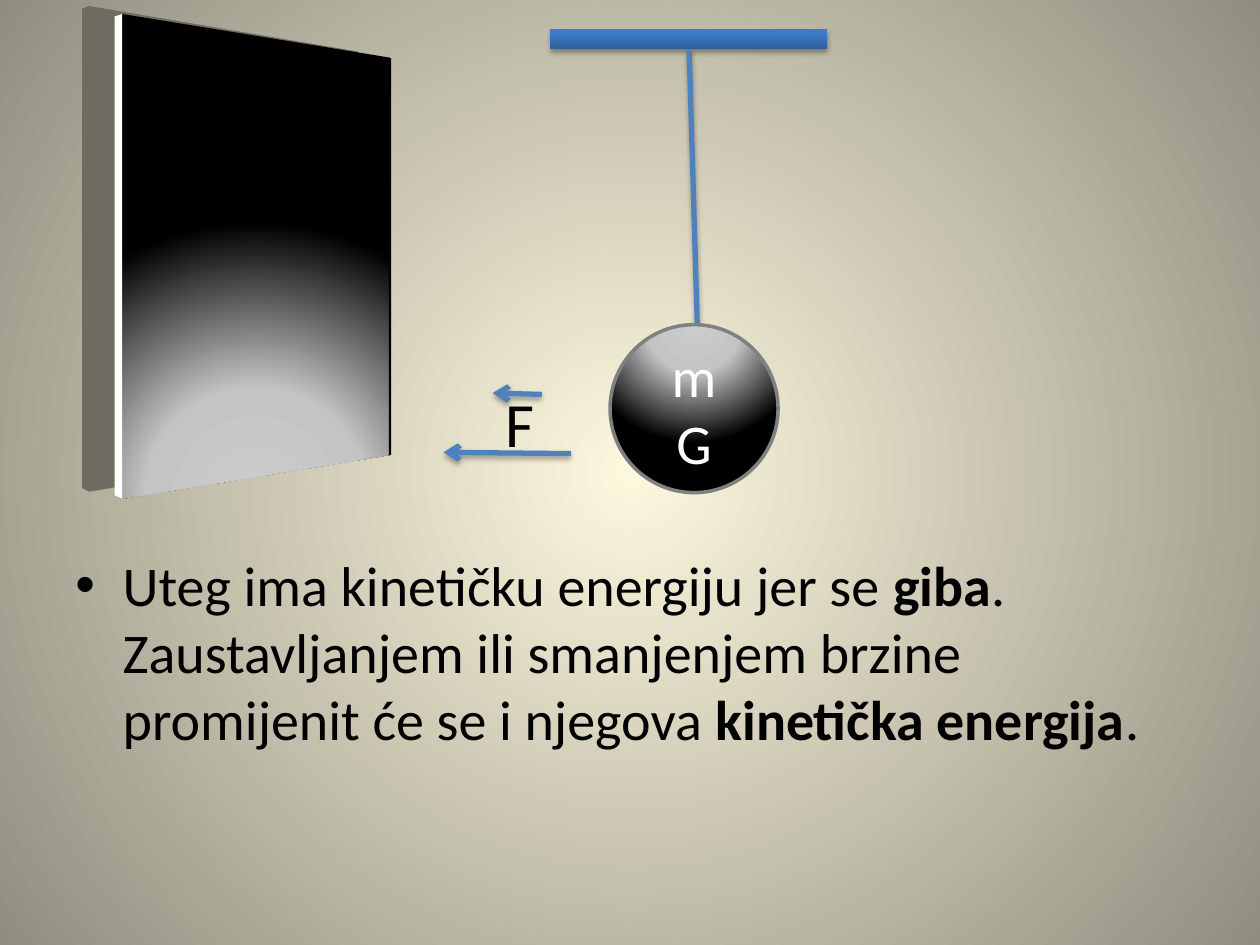
import pptx
import pptx.util
import pptx.oxml
import pptx.oxml.ns
import pptx.dml.color
import pptx.enum.shapes
import pptx.enum.text
from dataclasses import dataclass

Pt = pptx.util.Pt
RGB = pptx.dml.color.RGBColor.from_string
qn = pptx.oxml.ns.qn
NS = pptx.oxml.ns.nsdecls("a")
SHAPE = pptx.enum.shapes.MSO_SHAPE
ALIGN = pptx.enum.text.PP_ALIGN


@dataclass(frozen=True)
class Theme:
    font: str = "Calibri"
    body: int = 32
    force: int = 36
    black: str = "000000"
    white: str = "FFFFFF"
    blue: str = "4F81BD"
    rim: str = "808080"
    slab_back: str = "6E6B60"
    backdrop: tuple = ((0, "FCF7DD"), (100, "918E81"))
    bar: tuple = ((0, "2F5F99"), (80, "3D7CC7"), (100, "3A7CCB"))
    metal: tuple = ((0, "CCCCCC"), (40, "C4C4C4"), (100, "000000"))


T = Theme()


def set_gradient(fill, owner, stops, direction):
    """Fill with stops; direction holds the XML of a:lin or a:path."""
    fill.gradient()
    old = owner.find(".//" + qn("a:gradFill"))
    gs = "".join(f'<a:gs pos="{pos * 1000}"><a:srgbClr val="{color}"/></a:gs>'
                 for pos, color in stops)
    new = pptx.oxml.parse_xml(
        f'<a:gradFill {NS} rotWithShape="1"><a:gsLst>{gs}</a:gsLst>{direction}</a:gradFill>')
    old.getparent().replace(old, new)


def add_shadow(sp):
    """Add a soft shadow below; call after the fill and line are set."""
    sp.element.spPr.append(pptx.oxml.parse_xml(
        f'<a:effectLst {NS}><a:outerShdw blurRad="{Pt(3.1)}" dist="{Pt(1.8)}" '
        'dir="5400000" rotWithShape="0"><a:srgbClr val="000000"><a:alpha val="35000"/>'
        '</a:srgbClr></a:outerShdw></a:effectLst>'))


CIRCLE = ('<a:path path="circle"><a:fillToRect l="50000" t="{}" r="50000" b="{}"/></a:path>')

prs = pptx.Presentation()
prs.slide_width, prs.slide_height = Pt(720), Pt(540)
s = prs.slides.add_slide(prs.slide_layouts[6])
set_gradient(s.background.fill, s.element, T.backdrop, CIRCLE.format(50000, 50000))

# Body sentence and force label
tb = s.shapes.add_textbox(Pt(36), Pt(311), Pt(648), Pt(170))
tf = tb.text_frame
tf.word_wrap = True
p = tf.paragraphs[0]
for text, bold in (("Uteg ima kinetičku energiju jer se ", False), ("giba", True),
                   (". Zaustavljanjem ili smanjenjem brzine promijenit će se i njegova ", False),
                   ("kinetička energija", True), (".", False)):
    r = p.add_run()
    r.text, r.font.bold = text, bold
pPr = p._p.get_or_add_pPr()
pPr.set("marL", str(Pt(27)))
pPr.set("indent", str(-Pt(27)))
pPr.append(pptx.oxml.parse_xml(f'<a:buFont {NS} typeface="Arial"/>'))
pPr.append(pptx.oxml.parse_xml(f'<a:buChar {NS} char="•"/>'))

label = s.shapes.add_textbox(Pt(282), Pt(216), Pt(40), Pt(51))
label.text_frame.text = "F"
for box, size in ((tb, T.body), (label, T.force)):
    for r in box.text_frame.paragraphs[0].runs:
        r.font.name, r.font.size = T.font, Pt(size)
        r.font.color.rgb = RGB(T.black)

# Ceiling bar
bar = s.shapes.add_shape(SHAPE.RECTANGLE, Pt(314.6), Pt(16.8), Pt(158), Pt(11.5))
set_gradient(bar.fill, bar.element, T.bar, '<a:lin ang="16200000" scaled="0"/>')
bar.line.fill.background()
add_shadow(bar)

# String, then the two force arrows
for x1, y1, x2, y2, arrow in ((393.8, 28.3, 399.3, 214, False),
                              (326.2, 259.2, 253.4, 258.5, True),
                              (309.6, 225.4, 281.5, 224.6, True)):
    line = s.shapes.add_connector(pptx.enum.shapes.MSO_CONNECTOR.STRAIGHT,
                                  Pt(x1), Pt(y1), Pt(x2), Pt(y2))
    line.line.color.rgb = RGB(T.blue)
    line.line.width = Pt(3)
    if arrow:
        line.line._get_or_add_ln().append(
            pptx.oxml.parse_xml(f'<a:tailEnd {NS} type="arrow"/>'))
    add_shadow(line)

# Weight
ball = s.shapes.add_shape(SHAPE.OVAL, Pt(348.6), Pt(185.5), Pt(96), Pt(96))
set_gradient(ball.fill, ball.element, T.metal, CIRCLE.format(-80000, 180000))
ball.line.color.rgb = RGB(T.rim)
ball.line.width = Pt(2)
ball.shadow.inherit = False
tf = ball.text_frame
tf.text = "m\nG"
tf.vertical_anchor = pptx.enum.text.MSO_ANCHOR.MIDDLE
for p in tf.paragraphs:
    p.alignment = ALIGN.CENTER
    f = p.runs[0].font
    f.name, f.size = T.font, Pt(T.body)
    f.color.rgb = RGB(T.white)

# Slab in perspective: cast shadow, front face, then the lit and dark edges that trim it
for color, points in (
        (T.slab_back, ((47, 5), (51, 3.5), (204.5, 29.5), (204.5, 255), (51, 281), (47, 279))),
        (None, ((69.71, 8), (222.86, 33), (222.86, 260), (69.71, 285))),
        (T.white, ((65.5, 9.5), (69.8, 8), (69.8, 285), (65.5, 283))),
        (T.black, ((222.3, 33), (223.5, 33.2), (223.5, 260), (222.3, 260.2)))):
    fb = s.shapes.build_freeform(Pt(points[0][0]), Pt(points[0][1]))
    fb.add_line_segments([(Pt(x), Pt(y)) for x, y in points[1:]])
    sp = fb.convert_to_shape()
    if color:
        sp.fill.solid()
        sp.fill.fore_color.rgb = RGB(color)
    else:
        set_gradient(sp.fill, sp.element, T.metal, CIRCLE.format(180000, -80000))
    sp.line.fill.background()
    sp.shadow.inherit = False

prs.save("out.pptx")
